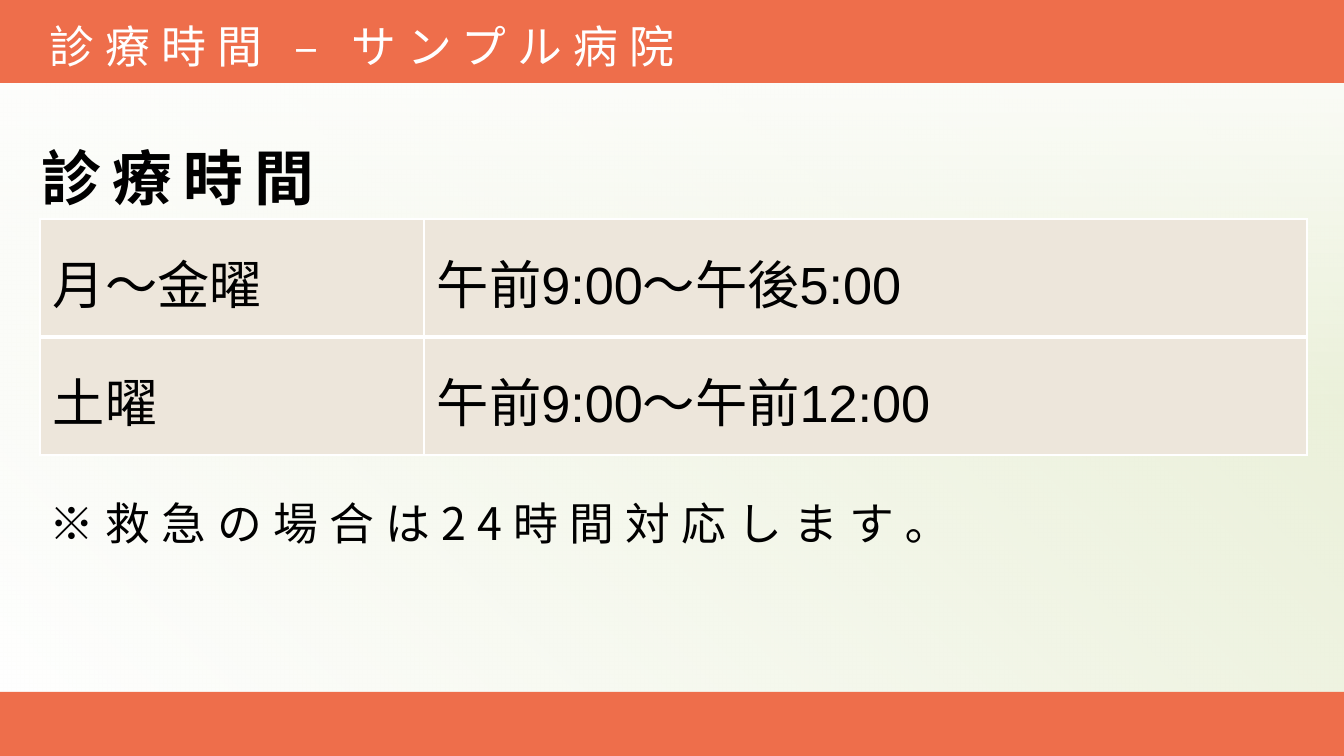
from lxml import etree
from pptx import Presentation
from pptx.dml.color import RGBColor
from pptx.enum.shapes import MSO_SHAPE
from pptx.enum.text import MSO_ANCHOR, MSO_AUTO_SIZE, PP_ALIGN
from pptx.oxml import parse_xml
from pptx.oxml.ns import qn
from pptx.util import Pt

RECT = MSO_SHAPE.RECTANGLE
TOP, MIDDLE = MSO_ANCHOR.TOP, MSO_ANCHOR.MIDDLE
GROW = MSO_AUTO_SIZE.SHAPE_TO_FIT_TEXT
LEFT = PP_ALIGN.LEFT
NS = "http://schemas.openxmlformats.org/drawingml/2006/main"
SCALE = 914400 / 134.4
W, H = 1344, 756
CJK = "Noto Sans CJK JP"
ORANGE, BEIGE, WHITE, BLACK = "EE6E4B", "EDE6DB", "FFFFFF", "000000"
HOURS = [("月～金曜", "午前9:00～午後5:00"), ("土曜", "午前9:00～午前12:00")]


def px(n):
    return round(n * SCALE)


def rgb(value):
    return RGBColor.from_string(value)


def gradient(stops, shade):
    gs = "".join(
        f'<a:gs pos="{pos * 1000}"><a:srgbClr val="{color}">'
        f'<a:alpha val="{alpha * 1000}"/></a:srgbClr></a:gs>'
        for pos, color, alpha in stops)
    return parse_xml(f'<a:gradFill xmlns:a="{NS}" rotWithShape="1">'
                     f'<a:gsLst>{gs}</a:gsLst>{shade}</a:gradFill>')


def replace_gradient(parent, new):
    parent.replace(parent.find(qn("a:gradFill")), new)


def add_rect(s, box):
    sp = s.shapes.add_shape(RECT, *map(px, box))
    sp.shadow.inherit = False
    sp.line.fill.background()
    return sp


def add_bar(s, box):
    sp = add_rect(s, box)
    sp.fill.solid()
    sp.fill.fore_color.rgb = rgb(ORANGE)


def add_run(p, text, size, font, color, bold=False, spacing=0):
    p.alignment = LEFT
    r = p.add_run()
    r.text = text
    r.font.size = Pt(size)
    r.font.name = font
    r.font.bold = bold
    r.font.color.rgb = rgb(color)
    rPr = r.font._element
    if spacing:
        rPr.set("spc", str(spacing * 100))
    rPr.find(qn("a:latin")).addnext(
        etree.Element(qn("a:ea"), typeface=CJK))


def write_text(sp, box, text, size, color, bold=False, line=1.0):
    sp.left, sp.top, sp.width, sp.height = map(px, box)
    tf = sp.text_frame
    tf.word_wrap = True
    tf.auto_size = GROW
    tf.vertical_anchor = TOP
    p = tf.paragraphs[0]
    p.line_spacing = line
    add_run(p, text, size, CJK, color, bold, 6)


def add_text(s, box, *args, **kwargs):
    write_text(s.shapes.add_textbox(*map(px, box)), box, *args, **kwargs)


def add_backdrop(s, box):
    s.background.fill.gradient()
    bgPr = s.background._cSld.bg.bgPr
    replace_gradient(bgPr, gradient(
        [(0, WHITE, 100), (54, "DFE8C4", 100)],
        '<a:lin ang="5400000" scaled="0"/>'))
    sp = add_rect(s, box)
    sp.fill.gradient()
    replace_gradient(sp._element.spPr, gradient(
        [(0, "979797", 100), (0, WHITE, 100), (100, WHITE, 25)],
        '<a:path path="circle">'
        '<a:fillToRect t="100000" r="100000"/></a:path>'))


def set_borders(cell, **widths):
    tcPr = cell._tc.get_or_add_tcPr()
    for side in "LRTB":
        ln = etree.SubElement(tcPr, qn(f"a:ln{side}"),
                              w=str(Pt(widths.get(side, 1))))
        fill = etree.SubElement(ln, qn("a:solidFill"))
        etree.SubElement(fill, qn("a:srgbClr"), val=WHITE)


def add_hours(s, box, widths):
    table = s.shapes.add_table(len(HOURS), len(widths), *map(px, box)).table
    table.first_row = table.horz_banding = False
    for col, width in zip(table.columns, widths):
        col.width = px(width)
    for i, texts in enumerate(HOURS):
        table.rows[i].height = px(box[3] // len(HOURS))
        for j, text in enumerate(texts):
            cell = table.cell(i, j)
            set_borders(cell, **({"T": 3} if i else {"B": 3}))
            cell.fill.solid()
            cell.fill.fore_color.rgb = rgb(BEIGE)
            cell.vertical_anchor = MIDDLE
            cell.margin_left = cell.margin_right = px(13)
            cell.margin_top, cell.margin_bottom = px(7), 0
            add_run(cell.text_frame.paragraphs[0], text, 28, "Arial", BLACK)


def add_body(s, x, y):
    add_text(s, (x - 12, y, 836, 86), "診療時間", 32, BLACK, bold=True)
    add_hours(s, (x, y + 85, 1267, 236), (384, 883))
    add_text(s, (x - 4, y + 328, 1168, 95), "※救急の場合は24時間対応します｡",
             24, BLACK, line=1.5)


def add_header(s, box):
    x, y, w, h = box
    add_bar(s, box)
    title = s.shapes.title
    s.shapes._spTree.append(title._element)
    write_text(title, (x + 36, y + 12, 754, 67),
               "診療時間 – サンプル病院", 24, WHITE)


def main():
    prs = Presentation()
    prs.slide_width, prs.slide_height = px(W), px(H)
    s = prs.slides.add_slide(prs.slide_layouts[5])
    add_backdrop(s, (0, 60, 1355, 632))
    add_body(s, 40, 134)
    add_bar(s, (0, 692, W, 64))
    add_header(s, (0, 0, W, 83))
    prs.save("out.pptx")


if __name__ == "__main__":
    main()
